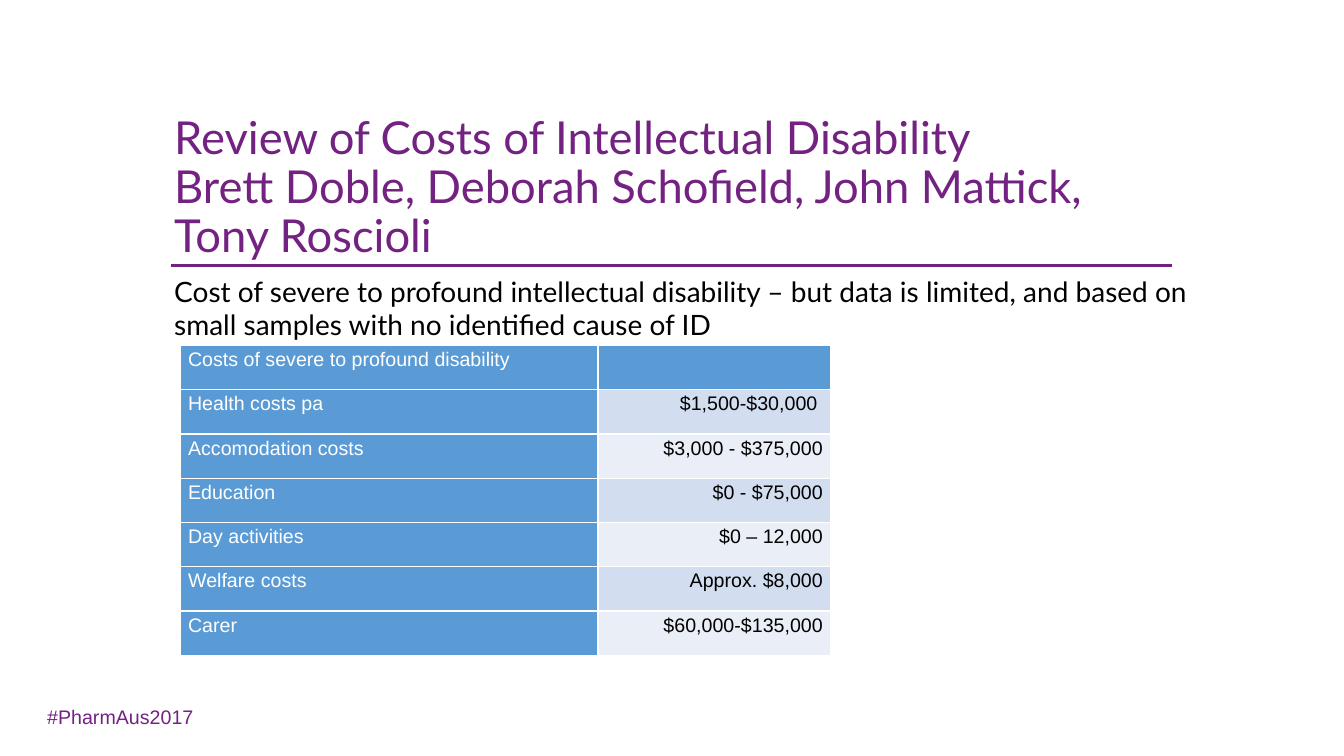
from dataclasses import dataclass

from lxml.etree import SubElement
from pptx import Presentation
from pptx.dml.color import RGBColor
from pptx.enum.shapes import MSO_CONNECTOR as Connector
from pptx.enum.text import MSO_ANCHOR as Anchor, PP_ALIGN as Align
from pptx.oxml.ns import qn
from pptx.util import Cm, Pt

PURPLE = RGBColor(0x73, 0x22, 0x82)
BLACK = RGBColor(0x00, 0x00, 0x00)
WHITE = RGBColor(0xFF, 0xFF, 0xFF)
BLUE = RGBColor(0x5B, 0x9B, 0xD5)
BANDS = (RGBColor(0xD2, 0xDE, 0xEF), RGBColor(0xEA, 0xEF, 0xF7))


@dataclass
class Label:
    text: str
    left: float
    top: float
    width: float
    height: float
    size: float
    font: str
    color: RGBColor
    spacing: float = 1.0
    anchor: Anchor = Anchor.TOP


@dataclass
class Cost:
    item: str
    amount: str


LABELS = [
    Label("Review of Costs of Intellectual Disability\v"
          "Brett Doble, Deborah Schofield, John Mattick,\vTony Roscioli",
          4.14, 2.92, 27.41, 3.68, 32.4, "Lato", PURPLE, 0.9, Anchor.MIDDLE),
    Label("Cost of severe to profound intellectual disability – but data is "
          "limited, and based on\vsmall samples with no identified cause of ID",
          4.14, 6.78, 27.41, 1.47, 20, "Lato", BLACK),
    Label("#PharmAus2017", 0.94, 17.65, 4.34, 0.86, 14, "Arial", PURPLE),
]

COSTS = [
    Cost("Costs of severe to profound disability", ""),
    Cost("Health costs pa", "$1,500-$30,000 "),
    Cost("Accomodation costs", "$3,000 - $375,000"),
    Cost("Education", "$0 - $75,000"),
    Cost("Day activities", "$0 – 12,000"),
    Cost("Welfare costs", "Approx. $8,000"),
    Cost("Carer", "$60,000-$135,000"),
]


def style_paragraph(p, size: float, font: str, color: RGBColor, spacing: float) -> None:
    p.line_spacing = spacing
    p.font.size = Pt(size)
    for r in p.runs:
        r.font.size = Pt(size)
        r.font.name = font
        r.font.bold = False
        r.font.color.rgb = color


def add_label(s, label: Label) -> None:
    sp = s.shapes.add_textbox(Cm(label.left), Cm(label.top), Cm(label.width), Cm(label.height))
    tf = sp.text_frame
    tf.word_wrap = True
    tf.vertical_anchor = label.anchor
    tf.text = label.text
    style_paragraph(tf.paragraphs[0], label.size, label.font, label.color, label.spacing)


def add_rule(s) -> None:
    rule = s.shapes.add_connector(Connector.STRAIGHT, Cm(4.32), Cm(6.68), Cm(29.54), Cm(6.68))
    rule.line.color.rgb = PURPLE
    rule.line.width = Pt(2)
    SubElement(rule.element.spPr, qn("a:effectLst"))


def add_borders(cell) -> None:
    tc_pr = cell._tc.get_or_add_tcPr()
    for side in ("lnL", "lnR", "lnT", "lnB"):
        ln = SubElement(tc_pr, qn(f"a:{side}"), w=str(Pt(1)))
        fill = SubElement(ln, qn("a:solidFill"))
        SubElement(fill, qn("a:srgbClr"), val=str(WHITE))


def fill_cell(cell, text: str, fill: RGBColor, color: RGBColor, align: Align) -> None:
    add_borders(cell)
    cell.fill.solid()
    cell.fill.fore_color.rgb = fill
    cell.margin_left = cell.margin_right = Cm(0.19)
    cell.margin_top = cell.margin_bottom = Cm(0)
    cell.text = text
    p = cell.text_frame.paragraphs[0]
    p.alignment = align
    style_paragraph(p, 14, "Arial", color, 1.15)


def add_cost_table(s, costs: list[Cost]) -> None:
    frame = s.shapes.add_table(len(costs), 2, Cm(4.55), Cm(8.71), Cm(16.38), Cm(7.8))
    table = frame.table
    table.first_row = table.horz_banding = False
    table.columns[0].width = Cm(10.52)
    table.columns[1].width = Cm(5.86)
    for i, cost in enumerate(costs):
        fill_cell(table.cell(i, 0), cost.item, BLUE, WHITE, Align.LEFT)
        band = BANDS[(i - 1) % 2] if i else BLUE
        fill_cell(table.cell(i, 1), cost.amount, band, BLACK, Align.RIGHT)


def main() -> None:
    prs = Presentation()
    prs.slide_width, prs.slide_height = Cm(33.87), Cm(19.05)
    s = prs.slides.add_slide(prs.slide_layouts[6])
    add_rule(s)
    add_cost_table(s, COSTS)
    for label in LABELS:
        add_label(s, label)
    prs.save("out.pptx")


if __name__ == "__main__":
    main()
